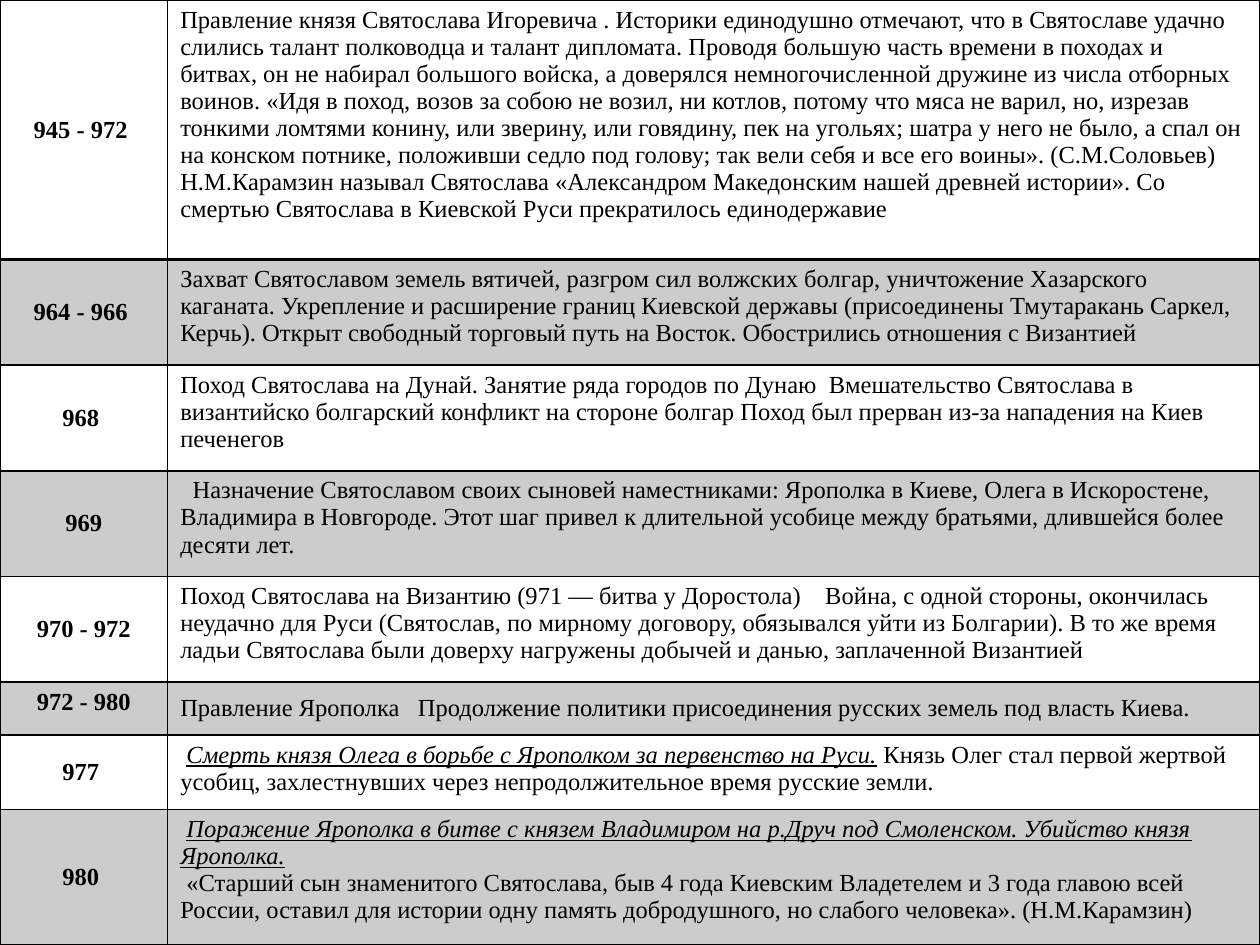
from lxml.etree import SubElement
from pptx import Presentation
from pptx.dml.color import RGBColor
from pptx.enum.text import MSO_ANCHOR as Anchor, PP_ALIGN as Align
from pptx.oxml.ns import qn
from pptx.util import Cm, Pt

BLACK = RGBColor(0, 0, 0)
GREY = RGBColor(0xCC, 0xCC, 0xCC)
PLAIN = {"name": "Times New Roman", "size": Pt(14), "bold": False}
BOLD = {**PLAIN, "bold": True}
EVENT = {**PLAIN, "italic": True, "underline": True}

COLUMN_WIDTHS = [3.38, 22.02]
ROW_HEIGHTS = [5.23, 2.13, 2.13, 2.13, 2.13, 1.07, 1.5, 2.73]

# Each row: years, then the runs of its description
ROWS = [
    ("945 - 972 ", [(
        "Правление князя Святослава Игоревича . Историки единодушно отмечают, что в Святославе "
        "удачно слились талант полководца и талант дипломата. Проводя большую часть времени в "
        "походах и битвах, он не набирал большого войска, а доверялся немногочисленной дружине "
        "из числа отборных воинов. «Идя в поход, возов за собою не возил, ни котлов, потому что "
        "мяса не варил, но, изрезав тонкими ломтями конину, или зверину, или говядину, пек на "
        "угольях; шатра у него не было, а спал он на конском потнике, положивши седло под "
        "голову; так вели себя и все его воины». (С.М.Соловьев)\n"
        "Н.М.Карамзин называл Святослава «Александром Македонским нашей древней истории». Со "
        "смертью Святослава в Киевской Pycи прекратилось единодержавие", PLAIN)]),
    ("964 - 966 ", [(
        "Захват Святославом земель вятичей, разгром сил волжских болгар, уничтожение Хазарского "
        "каганата. Укрепление и расширение границ Киевской державы (присоединены Тмутаракань "
        "Саркел, Керчь). Открыт свободный торговый путь на Восток. Обострились отношения с "
        "Византией", PLAIN)]),
    ("968 ", [(
        "Поход Святослава на Дунай. Занятие ряда городов по Дунаю  Вмешательство Святослава в "
        "византийско болгарский конфликт на стороне болгар Поход был прерван из-за нападения на "
        "Киев печенегов", PLAIN)]),
    ("969", [("  ", BOLD), (
        "Назначение Святославом своих сыновей наместниками: Ярополка в Киеве, Олега в "
        "Искоростене, Владимира в Новгороде. Этот шаг привел к длительной усобице между "
        "братьями, длившейся более десяти лет.", PLAIN)]),
    ("970 - 972", [(
        "Поход Святослава на Византию (971 — битва у Доростола)    Война, с одной стороны, "
        "окончилась неудачно для Руси (Святослав, по мирному договору, обязывался уйти из "
        "Болгарии). В то же время ладьи Святослава были доверху нагружены добычей и данью, "
        "заплаченной Византией", PLAIN)]),
    ("972 - 980", [(
        "Правление Ярополка   Продолжение политики присоединения русских земель под власть "
        "Киева.", PLAIN)]),
    ("977 ", [
        (" ", BOLD),
        ("Смерть князя Олега в борьбе с Ярополком за первенство на Руси.", EVENT),
        (" Князь Олег стал первой жертвой усобиц, захлестнувших через непродолжительное время "
         "русские земли.", PLAIN)]),
    ("980 ", [
        (" ", PLAIN),
        ("Поражение Ярополка в битве с князем Владимиром на р.Друч под Смоленском. Убийство "
         "князя Ярополка.\n", EVENT),
        (" «Старший сын знаменитого Святослава, быв 4 года Киевским Владетелем и 3 года главою "
         "всей России, оставил для истории одну память добродушного, но слабого человека». "
         "(Н.М.Карамзин)", PLAIN)]),
]


def write_runs(para, runs):
    for text, style in runs:
        for number, line in enumerate(text.split("\n")):
            if number:
                para.add_line_break()
            if not line:
                continue
            span = para.add_run()
            span.text = line
            span.font.color.rgb = BLACK
            for attribute, value in style.items():
                setattr(span.font, attribute, value)


def draw_borders(cell, widths):
    properties = cell._tc.get_or_add_tcPr()
    for side, width in widths.items():
        line = SubElement(properties, qn(f"a:ln{side}"), w=str(Pt(width)))
        fill = SubElement(line, qn("a:solidFill"))
        SubElement(fill, qn("a:srgbClr"), val=str(BLACK))


# Slide
deck = Presentation()
deck.slide_width, deck.slide_height = Cm(25.4), Cm(19.05)
page = deck.slides.add_slide(deck.slide_layouts[6])

# Table grid
table = page.shapes.add_table(
    len(ROWS), 2, 0, 0, deck.slide_width, deck.slide_height).table
table.first_row = table.horz_banding = False
for column, width in zip(table.columns, COLUMN_WIDTHS):
    column.width = Cm(width)
for row, height in zip(table.rows, ROW_HEIGHTS):
    row.height = Cm(height)

# Cells: grey on every second row, a heavier rule under the first
for index, (years, description) in enumerate(ROWS):
    widths = {"L": 1, "R": 1, "T": 2 if index == 1 else 1, "B": 2 if index == 0 else 1}
    for cell, runs in zip(table.rows[index].cells, ([(years, BOLD)], description)):
        draw_borders(cell, widths)
        if index % 2:
            cell.fill.solid()
            cell.fill.fore_color.rgb = GREY
        else:
            cell.fill.background()
        write_runs(cell.text_frame.paragraphs[0], runs)

    # Years sit mid-row, except in the one-line row, where the description does
    years_cell, description_cell = table.rows[index].cells
    years_cell.text_frame.paragraphs[0].alignment = Align.CENTER
    one_line = years == "972 - 980"
    years_cell.vertical_anchor = Anchor.TOP if one_line else Anchor.MIDDLE
    description_cell.vertical_anchor = Anchor.MIDDLE if one_line else Anchor.TOP

deck.save("out.pptx")
